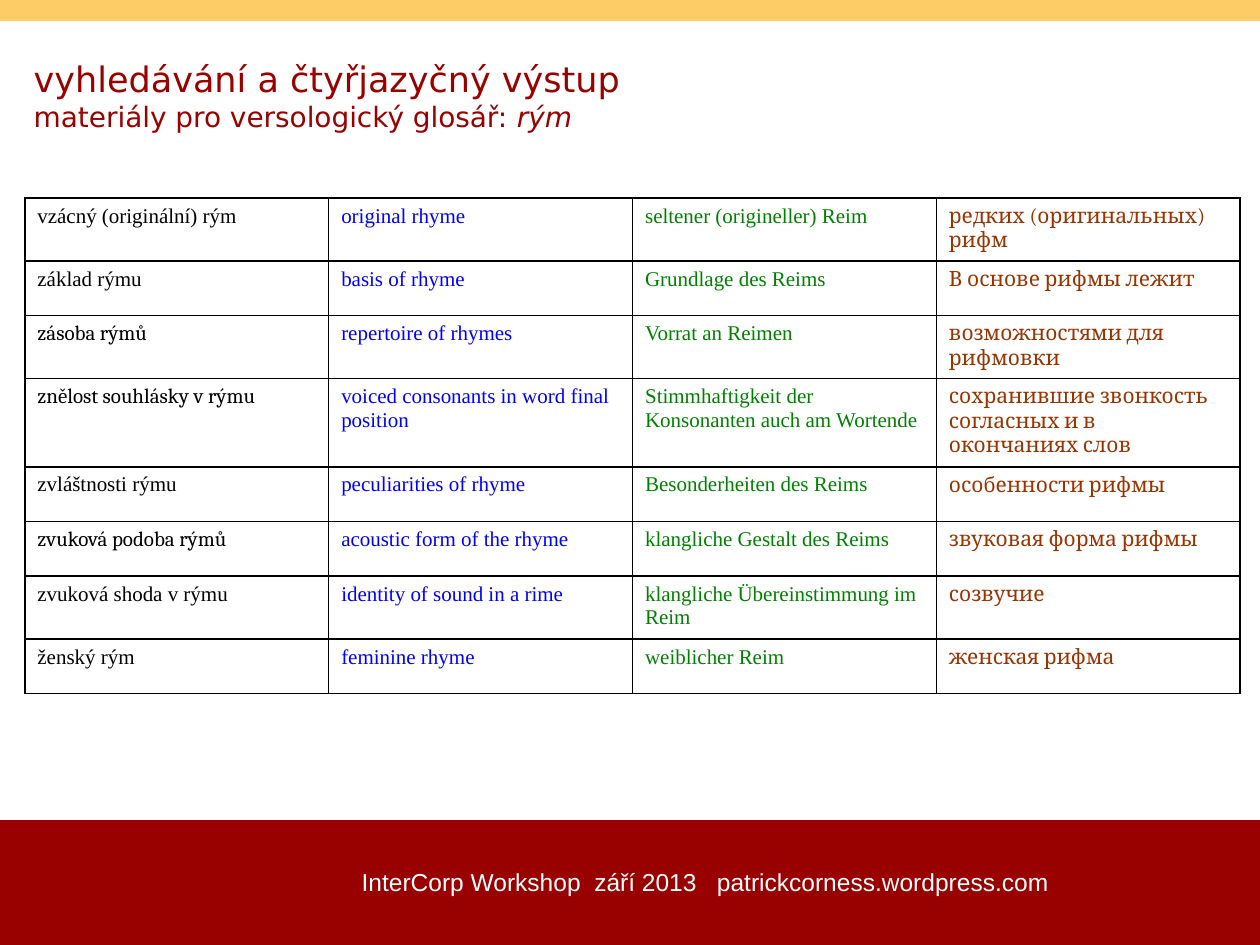
from lxml import etree
from pptx import Presentation
from pptx.dml.color import RGBColor
from pptx.enum.shapes import MSO_SHAPE
from pptx.enum.text import MSO_ANCHOR, PP_ALIGN
from pptx.oxml.ns import qn
from pptx.util import Pt

RECTANGLE = MSO_SHAPE.RECTANGLE
MIDDLE = MSO_ANCHOR.MIDDLE
CENTER = PP_ALIGN.CENTER

RED = RGBColor(0x99, 0x00, 0x00)
GOLD = RGBColor(0xFD, 0xCC, 0x66)
WHITE = RGBColor(0xFF, 0xFF, 0xFF)
BLACK = RGBColor(0x00, 0x00, 0x00)
BLUE = RGBColor(0x00, 0x00, 0xFF)
GREEN = RGBColor(0x00, 0x80, 0x00)
BROWN = RGBColor(0x99, 0x33, 0x00)

SERIF = "Times New Roman"
BOOK_SERIF = "Cambria"
LANGUAGE_FORMATS = [(SERIF, BLACK), (SERIF, BLUE), (SERIF, GREEN), (BOOK_SERIF, BROWN)]
BOOK_SERIF_TERMS = {"zásoba rýmů", "znělost souhlásky v rýmu", "zvuková podoba rýmů"}

GLOSSARY = [
    (36, "vzácný (originální) rým", "original rhyme",
     "seltener (origineller) Reim", "редких (оригинальных) рифм"),
    (31.2, "základ rýmu", "basis of rhyme",
     "Grundlage des Reims", "В основе рифмы лежит"),
    (36, "zásoba rýmů", "repertoire of rhymes",
     "Vorrat an Reimen", "возможностями для рифмовки"),
    (50.2, "znělost souhlásky v rýmu", "voiced consonants in word final position",
     "Stimmhaftigkeit der Konsonanten auch am Wortende",
     "сохранившие звонкость согласных и в окончаниях слов"),
    (31.2, "zvláštnosti rýmu", "peculiarities of rhyme",
     "Besonderheiten des Reims", "особенности рифмы"),
    (31.2, "zvuková podoba rýmů", "acoustic form of the rhyme",
     "klangliche Gestalt des Reims", "звуковая форма рифмы"),
    (36, "zvuková shoda v rýmu", "identity of sound in a rime",
     "klangliche Übereinstimmung im Reim", "созвучие"),
    (31.2, "ženský rým", "feminine rhyme",
     "weiblicher Reim", "женская рифма"),
]


def add_span(para, text, color, **formats):
    span = para.add_run()
    span.text = text
    for name, value in formats.items():
        setattr(span.font, name, value)
    span.font.color.rgb = color


def add_band(page, box, color):
    band = page.shapes.add_shape(RECTANGLE, *map(Pt, box))
    band.shadow.inherit = False
    band.fill.solid()
    band.fill.fore_color.rgb = color
    band.line.fill.background()


def add_text_box(page, box):
    frame = page.shapes.add_textbox(*map(Pt, box)).text_frame
    frame.word_wrap = True
    return frame


def add_title(page, box):
    frame = add_text_box(page, box)
    frame.vertical_anchor = MIDDLE
    para = frame.paragraphs[0]
    title_font = {"name": "DejaVu Sans", "size": Pt(20)}
    subtitle_font = {**title_font, "size": Pt(16)}
    add_span(para, "vyhledávání a čtyřjazyčný výstup ", RED, **title_font)
    para.add_line_break()
    add_span(para, "materiály pro versologický glosář: ", RED, **subtitle_font)
    add_span(para, "rým", RED, italic=True, **subtitle_font)


def add_footer(page, box):
    para = add_text_box(page, box).paragraphs[0]
    para.alignment = CENTER
    add_span(para, "InterCorp Workshop  září 2013   patrickcorness.wordpress.com",
             WHITE, name="Arial", size=Pt(14))


def add_borders(cell):
    properties = cell._tc.get_or_add_tcPr()
    for position, side in enumerate(("a:lnL", "a:lnR", "a:lnT", "a:lnB")):
        line = etree.Element(qn(side), w=str(Pt(1)))
        fill = etree.SubElement(line, qn("a:solidFill"))
        etree.SubElement(fill, qn("a:srgbClr"), val=str(BLACK))
        properties.insert(position, line)


def add_glossary(page, box):
    table = page.shapes.add_table(
        len(GLOSSARY), len(LANGUAGE_FORMATS), *map(Pt, box)).table
    table.first_row = False
    table.horz_banding = False
    for column in table.columns:
        column.width = Pt(box[2] / len(LANGUAGE_FORMATS))
    for row, (height, *terms) in zip(table.rows, GLOSSARY):
        row.height = Pt(height)
        for cell, term, (font, color) in zip(row.cells, terms, LANGUAGE_FORMATS):
            cell.fill.background()
            add_borders(cell)
            name = BOOK_SERIF if term in BOOK_SERIF_TERMS else font
            add_span(cell.text_frame.paragraphs[0], term, color, name=name, size=Pt(12))


def main():
    deck = Presentation()
    deck.slide_width, deck.slide_height = Pt(720), Pt(540)
    page = deck.slides.add_slide(deck.slide_layouts[6])
    add_band(page, (0, 468.6, 720, 71.4), RED)
    add_band(page, (0, 0, 720, 12), GOLD)
    add_footer(page, (185, 491.8, 436.3, 41))
    add_title(page, (12.2, 28.8, 666.7, 51.1))
    add_glossary(page, (14.2, 113.2, 694.6, sum(row[0] for row in GLOSSARY)))
    deck.save("out.pptx")


if __name__ == "__main__":
    main()
